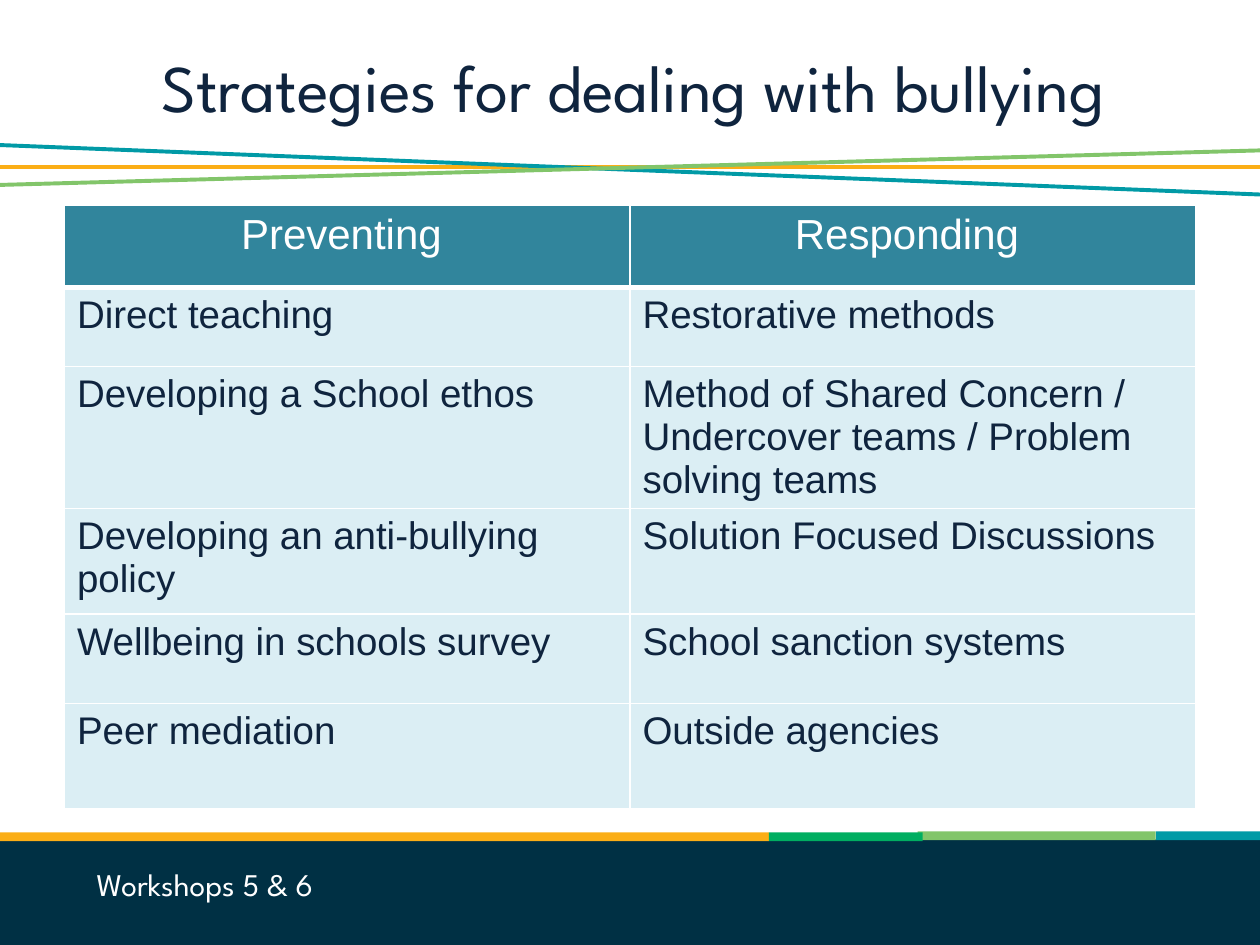
from lxml import etree
from pptx import Presentation
from pptx.dml.color import RGBColor
from pptx.enum.shapes import MSO_CONNECTOR, MSO_SHAPE
from pptx.enum.text import MSO_ANCHOR, PP_ALIGN
from pptx.oxml.ns import qn
from pptx.util import Cm, Pt

LEFT, CENTER = PP_ALIGN.LEFT, PP_ALIGN.CENTER
MIDDLE = MSO_ANCHOR.MIDDLE
RECTANGLE = MSO_SHAPE.RECTANGLE
STRAIGHT = MSO_CONNECTOR.STRAIGHT
TITLE_ONLY = 5

COLORS = {
    "ink": "0F243E", "white": "FFFFFF", "navy": "003044", "amber": "FBAE16",
    "teal": "019AA6", "lime": "82C56A", "green": "00AE61",
    "header": "31859C", "body": "DBEEF4",
}
HEADING_FONT, BODY_FONT = "League Spartan", "Arial"


def rgb(name):
    return RGBColor.from_string(COLORS[name])


def write(frame, text, size, color="ink", font=BODY_FONT, align=LEFT):
    frame.word_wrap = True
    para = frame.paragraphs[0]
    para.alignment = align
    span = para.add_run()
    span.text = text
    span.font.name = font
    span.font.size = Pt(size)
    span.font.bold = False
    span.font.color.rgb = rgb(color)


def add_border(cell, side, width):
    """Draw a white border of the given point width on side L, R, T or B."""
    properties = cell._tc.get_or_add_tcPr()
    line = etree.SubElement(properties, qn(f"a:ln{side}"), w=str(Pt(width)))
    fill = etree.SubElement(line, qn("a:solidFill"))
    etree.SubElement(fill, qn("a:srgbClr"), val=COLORS["white"])


class SlideBuilder:
    """Holds the current slide and adds elements in the deck's style."""

    def __init__(self, slide):
        self.slide = slide

    def title(self, text, *bounds):
        title = self.slide.shapes.title
        title.left, title.top, title.width, title.height = map(Cm, bounds)
        title.text_frame.vertical_anchor = MIDDLE
        write(title.text_frame, text, 38, font=HEADING_FONT, align=CENTER)

    def bar(self, color, *bounds):
        bar = self.slide.shapes.add_shape(RECTANGLE, *map(Cm, bounds))
        bar.shadow.inherit = False
        bar.fill.solid()
        bar.fill.fore_color.rgb = rgb(color)
        bar.line.fill.background()

    def line(self, color, *ends):
        line = self.slide.shapes.add_connector(STRAIGHT, *map(Cm, ends))
        line.line.color.rgb = rgb(color)
        line.line.width = Pt(2.25)
        etree.SubElement(line._element.spPr, qn("a:effectLst"))

    def text(self, text, *bounds, **style):
        box = self.slide.shapes.add_textbox(*map(Cm, bounds))
        write(box.text_frame, text, **style)

    def table(self, rows, left, top, column_width, heights):
        columns = len(rows[0])
        table = self.slide.shapes.add_table(
            len(rows), columns, Cm(left), Cm(top),
            Cm(column_width * columns), Cm(sum(heights))).table
        table.horz_banding = False
        for column in table.columns:
            column.width = Cm(column_width)
        for index, (texts, height) in enumerate(zip(rows, heights)):
            table.rows[index].height = Cm(height)
            for position, text in enumerate(texts):
                self.cell(table.cell(index, position), text, index == 0)

    def cell(self, cell, text, is_header):
        for side in "LRTB":
            add_border(cell, side, 3 if is_header and side == "B" else 1)
        cell.fill.solid()
        cell.fill.fore_color.rgb = rgb("header" if is_header else "body")
        if is_header:
            write(cell.text_frame, text, 24, color="white", align=CENTER)
        else:
            write(cell.text_frame, text, 22)


def main():
    deck = Presentation()
    deck.slide_width, deck.slide_height = Cm(25.4), Cm(19.05)
    page = SlideBuilder(deck.slides.add_slide(deck.slide_layouts[TITLE_ONLY]))

    page.bar("navy", 0, 16.92, 25.4, 2.59)
    page.bar("amber", 0, 16.78, 15.5, 0.18)
    page.bar("teal", 23.3, 16.76, 2.1, 0.18)
    page.bar("lime", 18.5, 16.76, 4.8, 0.18)
    page.bar("green", 15.5, 16.78, 3.1, 0.18)

    page.line("amber", -0.08, 3.36, 25.9, 3.36)
    page.line("teal", -0.1, 2.92, 25.88, 3.94)
    page.line("lime", -0.08, 3.73, 25.83, 3.02)

    page.title("Strategies for dealing with bullying", 0.71, 0.15, 24.13, 3.18)
    page.table([
        ("Preventing ", "Responding "),
        ("Direct teaching", "Restorative methods"),
        ("Developing a School ethos",
         "Method of Shared Concern / Undercover teams / Problem solving teams"),
        ("Developing an anti-bullying policy", "Solution Focused Discussions"),
        ("Wellbeing in schools survey", "School sanction systems"),
        ("Peer mediation", "Outside agencies"),
    ], 1.3, 4.14, 11.4, [1.65, 1.6, 2.86, 2.13, 1.8, 2.13])
    page.text("Workshops 5 & 6", 1.7, 17.32, 7.19, 1.02,
              size=18, color="white", font=HEADING_FONT)

    deck.save("out.pptx")


if __name__ == "__main__":
    main()
